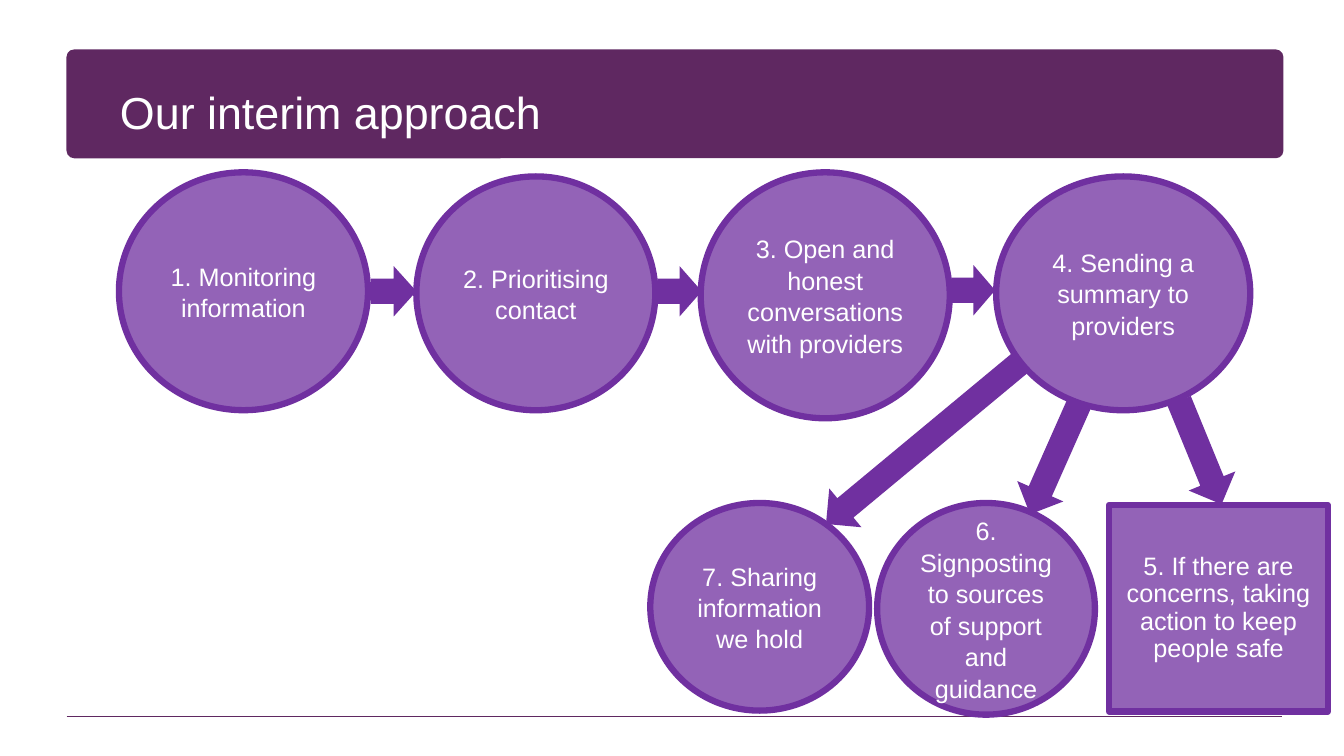
from lxml import etree
from pptx import Presentation
from pptx.dml.color import RGBColor
from pptx.enum.shapes import MSO_CONNECTOR, MSO_SHAPE
from pptx.enum.text import MSO_ANCHOR, MSO_AUTO_SIZE, PP_ALIGN
from pptx.oxml.ns import qn
from pptx.util import Inches, Pt

OVAL, BOX, ARROW = MSO_SHAPE.OVAL, MSO_SHAPE.RECTANGLE, MSO_SHAPE.RIGHT_ARROW
BANNER, STRAIGHT = MSO_SHAPE.ROUNDED_RECTANGLE, MSO_CONNECTOR.STRAIGHT
TOP, MIDDLE = MSO_ANCHOR.TOP, MSO_ANCHOR.MIDDLE
LEFT, CENTER = PP_ALIGN.LEFT, PP_ALIGN.CENTER
NO_FIT = MSO_AUTO_SIZE.NONE

THEME = {
    "font": "Arial",
    "plum": RGBColor(0x5F, 0x28, 0x61),
    "purple": RGBColor(0x70, 0x30, 0xA0),
    "white": RGBColor(0xFF, 0xFF, 0xFF),
    "title": Pt(32),
    "step": Pt(18),
    "outline": Pt(4.5),
    "rule": Pt(1),
    "opacity": 75,
}

TITLE = "Our interim approach"
STEPS = [
    ("1. Monitoring information", OVAL, (1.18, 1.71, 2.47, 2.36)),
    ("2. Prioritising contact", OVAL, (4.13, 1.75, 2.37, 2.32)),
    ("3. Open and honest conversations with providers", OVAL, (6.95, 1.71, 2.47, 2.44)),
    ("6. Signposting to sources of support and guidance", OVAL, (8.7, 4.99, 2.16, 2.1)),
    ("4. Sending a summary to providers", OVAL, (9.88, 1.75, 2.52, 2.32)),
    ("7. Sharing information we hold", OVAL, (6.45, 4.99, 2.17, 2.06)),
    ("5. If there are concerns, taking action to keep people safe", BOX, (11, 5.01, 2.17, 2.05)),
]
ARROW_HEIGHT = 0.5
ARROWS = [
    (3.68, 2.64, 0.45, 0),
    (6.52, 2.64, 0.44, 0),
    (9.44, 2.63, 0.43, 0),
    (7.9, 4.14, 2.53, 140.3),
    (9.85, 4.29, 1.23, 113.9),
    (11.35, 4.24, 1.11, 67.7),
]


def add_filled(s, kind, at, color):
    sp = s.shapes.add_shape(kind, *map(Inches, at))
    sp.shadow.inherit = False
    sp.fill.solid()
    sp.fill.fore_color.rgb = color
    sp.line.fill.background()
    return sp


def write(sp, text, size, align, anchor):
    tf = sp.text_frame
    tf.word_wrap = True
    tf.auto_size = NO_FIT
    tf.vertical_anchor = anchor
    p = tf.paragraphs[0]
    p.alignment = align
    r = p.add_run()
    r.text = text
    r.font.name = THEME["font"]
    r.font.size = size
    r.font.color.rgb = THEME["white"]
    return p


def add_step(s, text, kind, at):
    sp = add_filled(s, kind, at, THEME["purple"])
    color = sp.fill._xPr.find(qn("a:solidFill"))[0]
    etree.SubElement(color, qn("a:alpha"), val=str(THEME["opacity"] * 1000))
    sp.line.color.rgb = THEME["purple"]
    sp.line.width = THEME["outline"]
    p = write(sp, text, THEME["step"], CENTER, MIDDLE)
    if kind == BOX:
        tf = sp.text_frame
        tf.margin_left = tf.margin_right = tf.margin_top = tf.margin_bottom = 0
        p.line_spacing = 0.9
    else:
        p.line_spacing = 1.04


def add_frame(s):
    banner = add_filled(s, BANNER, (0.66, 0.49, 12.07, 1.08), THEME["plum"])
    banner.adjustments[0] = 0.07
    rule = s.shapes.add_connector(
        STRAIGHT, Inches(0.66), Inches(7.11), Inches(12.72), Inches(7.11))
    rule.line.color.rgb = THEME["plum"]
    rule.line.width = THEME["rule"]
    etree.SubElement(rule._element.spPr, qn("a:effectLst"))


def add_title(s):
    title = s.shapes.title
    title.left, title.top, title.width, title.height = map(Inches, (1.09, 0.79, 7.6, 0.64))
    write(title, TITLE, THEME["title"], LEFT, TOP)
    title._element.getparent().append(title._element)


def main():
    prs = Presentation()
    prs.slide_width, prs.slide_height = Inches(13.33), Inches(7.5)
    s = prs.slides.add_slide(prs.slide_layouts[5])
    add_frame(s)
    add_title(s)
    for text, kind, at in STEPS:
        add_step(s, text, kind, at)
    for left, top, width, angle in ARROWS:
        sp = add_filled(s, ARROW, (left, top, width, ARROW_HEIGHT), THEME["purple"])
        sp.rotation = angle
    prs.save("out.pptx")


if __name__ == "__main__":
    main()
